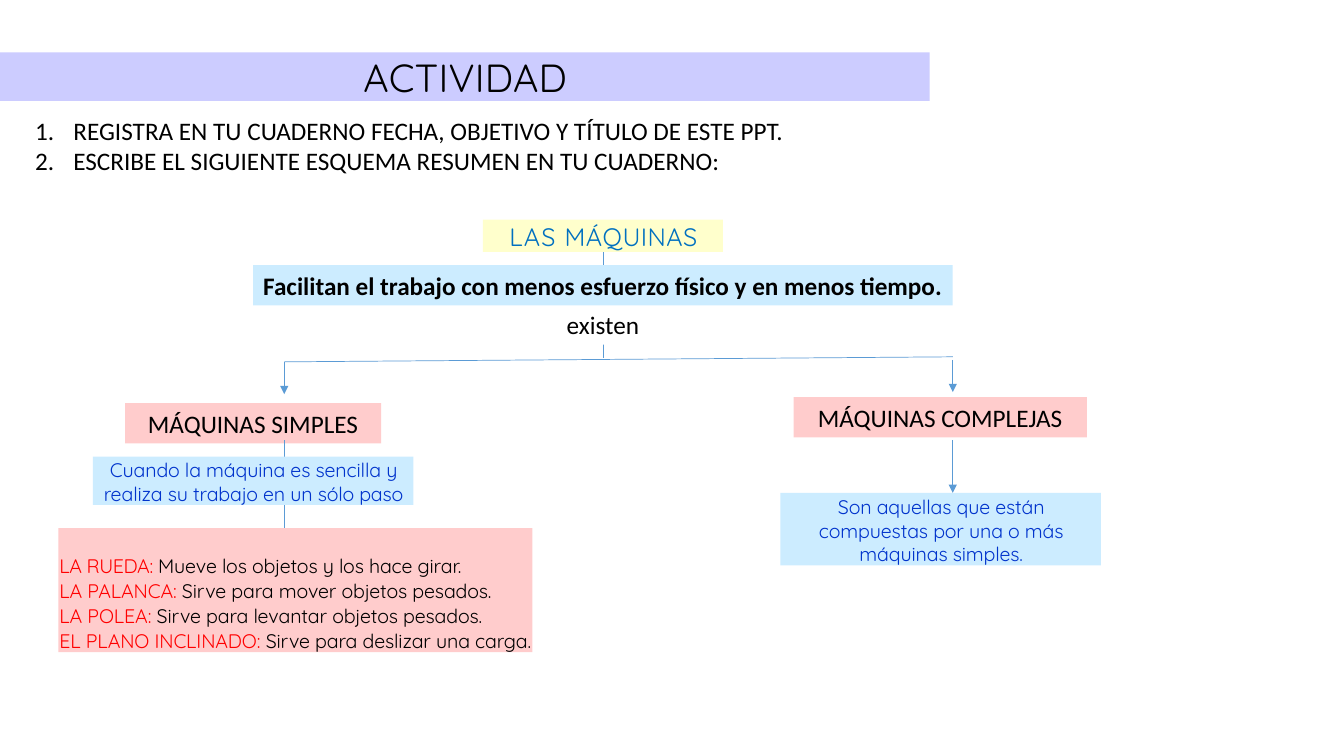
from dataclasses import dataclass
from lxml.etree import SubElement
from pptx import Presentation
from pptx.dml.color import RGBColor as RGB
from pptx.enum.shapes import MSO_CONNECTOR as LINK, MSO_SHAPE as SHAPE
from pptx.enum.text import MSO_ANCHOR as ANCHOR, MSO_AUTO_SIZE as AUTO, PP_ALIGN as ALIGN
from pptx.oxml.ns import qn
from pptx.util import Pt

PX = 9144  # 100 px to the inch


@dataclass(frozen=True)
class Look:
    font: str
    size: int
    bold: bool = False
    align: ALIGN = ALIGN.CENTER
    anchor: ANCHOR = ANCHOR.TOP
    inset: tuple = (10, 5, 10, 5)
    left: int = 0
    hang: int = 0
    before: float = 0


def quick(size, align=ALIGN.CENTER):
    """Tight, bottom-anchored Quicksand look."""
    return Look("Quicksand", size, False, align, ANCHOR.BOTTOM, (0, 1, 0, 0), 1, 0, 0.9)


THEME = {
    "lilac": "CCCCFF", "cream": "FFFFCC", "pink": "FFCCCC", "sky": "CCECFF",
    "white": "FFFFFF", "black": "000000", "red": "FF0000", "blue": "0070C0",
    "navy": "0033CC", "line": "5B9BD5", "weight": 0.5,
    "title": quick(28), "topic": quick(18), "note": quick(14),
    "kinds": quick(14, ALIGN.LEFT),
    "label": Look("Calibri", 18), "strong": Look("Calibri", 18, True),
    "steps": Look("Calibri", 18, align=ALIGN.LEFT, left=38, hang=38),
}

# Runs: text, colour, letter spacing in points
STEPS = [
    [("REGISTRA EN TU CUADERNO FECHA, OBJETIVO Y TÍTULO DE ESTE PPT.", "black", 0)],
    [("ESCRIBE EL SIGUIENTE ESQUEMA RESUMEN EN TU CUADERNO:", "black", 0)],
]
KINDS = [
    [(name, "red", gap), (use, "black", -0.1)]
    for name, gap, use in [
        ("LA RUEDA: ", -0.3, "Mueve los objetos y los hace girar."),
        ("LA PALANCA: ", -0.1, "Sirve para mover objetos pesados."),
        ("LA POLEA: ", -0.1, "Sirve para levantar objetos pesados."),
        ("EL PLANO INCLINADO: ", -0.1, "Sirve para deslizar una carga."),
    ]
]
TOPIC = [[("LAS ", "blue", 0.8), ("MÁQUINAS", "blue", 0.3)]]
SIMPLE = "Cuando la máquina es sencilla y realiza su trabajo en un sólo paso"
COMPLEX = "Son aquellas que están compuestas por una o más máquinas simples."
CLAIM = "Facilitan el trabajo con menos esfuerzo físico y en menos tiempo."


def one(text, ink="black", gap=0):
    return [[(text, ink, gap)]]


# Boxes: left, top, width, height, fill, look, paragraphs
BACK = [
    (0, 52, 922, 48, "lilac", "title", one("ACTIVIDAD", gap=0.2)),
    (25, 109, 910, 71, None, "steps", STEPS),
    (479, 218, 238, 32, "cream", "topic", TOPIC),
    (124, 400, 254, 40, "pink", "label", one("MÁQUINAS SIMPLES")),
    (787, 394, 291, 40, "pink", "label", one("MÁQUINAS COMPLEJAS")),
    (58, 524, 470, 123, "pink", "kinds", KINDS),
]
FRONT = [
    (510, 302, 176, 40, "white", "label", one("existen")),
    (251, 263, 694, 40, "sky", "strong", one(CLAIM)),
    (92, 453, 318, 48, "sky", "note", one(SIMPLE, "navy", -0.1)),
    (774, 489, 318, 72, "sky", "note", one(COMPLEX, "navy", -0.1)),
]
MID, WEST, EAST = 598, 282, 945
# Links: x1, y1, x2, y2, arrow
LINKS = [
    (MID, 250, MID, 355, False),
    (WEST, 359, EAST, 354, False),
    (WEST, 359, WEST, 391, True),
    (EAST, 357, EAST, 389, True),
    (WEST, 437, WEST, 524, False),
    (EAST, 437, EAST, 489, True),
]


def tint(name):
    return RGB.from_string(THEME[name])


def write(frame, look, paras):
    frame.word_wrap = True
    frame.auto_size = AUTO.SHAPE_TO_FIT_TEXT
    frame.vertical_anchor = look.anchor
    (frame.margin_left, frame.margin_top,
     frame.margin_right, frame.margin_bottom) = [n * PX for n in look.inset]
    for i, runs in enumerate(paras):
        para = frame.add_paragraph() if i else frame.paragraphs[0]
        para.alignment = look.align
        para.space_before = Pt(look.before)
        props = para._p.get_or_add_pPr()
        props.set("marL", str(look.left * PX))
        props.set("indent", str(-look.hang * PX))
        if look.hang:
            SubElement(props, qn("a:buAutoNum"), type="arabicPeriod")
        for text, ink, gap in runs:
            run = para.add_run()
            run.text = text
            font = run.font
            font.name, font.size, font.bold = look.font, Pt(look.size), look.bold
            font.color.rgb = tint(ink)
            run._r.get_or_add_rPr().set("spc", str(round(gap * 100)))


def draw_box(shapes, x, y, w, h, fill, look, paras):
    place = [n * PX for n in (x, y, w, h)]
    if fill:
        box = shapes.add_shape(SHAPE.RECTANGLE, *place)
        box.shadow.inherit = False
        box.fill.solid()
        box.fill.fore_color.rgb = tint(fill)
        box.line.fill.background()
    else:
        box = shapes.add_textbox(*place)
    write(box.text_frame, THEME[look], paras)


def draw_link(shapes, x1, y1, x2, y2, arrow):
    link = shapes.add_connector(LINK.STRAIGHT, *[n * PX for n in (x1, y1, x2, y2)])
    link.line.color.rgb = tint("line")
    link.line.width = Pt(THEME["weight"])
    if arrow:
        SubElement(link.line._get_or_add_ln(), qn("a:tailEnd"), type="triangle")
    SubElement(link._element.spPr, qn("a:effectLst"))


def main():
    deck = Presentation()
    deck.slide_width, deck.slide_height = 1333 * PX, 750 * PX
    shapes = deck.slides.add_slide(deck.slide_layouts[6]).shapes
    for box in BACK:
        draw_box(shapes, *box)
    for link in LINKS:
        draw_link(shapes, *link)
    for box in FRONT:
        draw_box(shapes, *box)
    deck.save("out.pptx")


if __name__ == "__main__":
    main()
